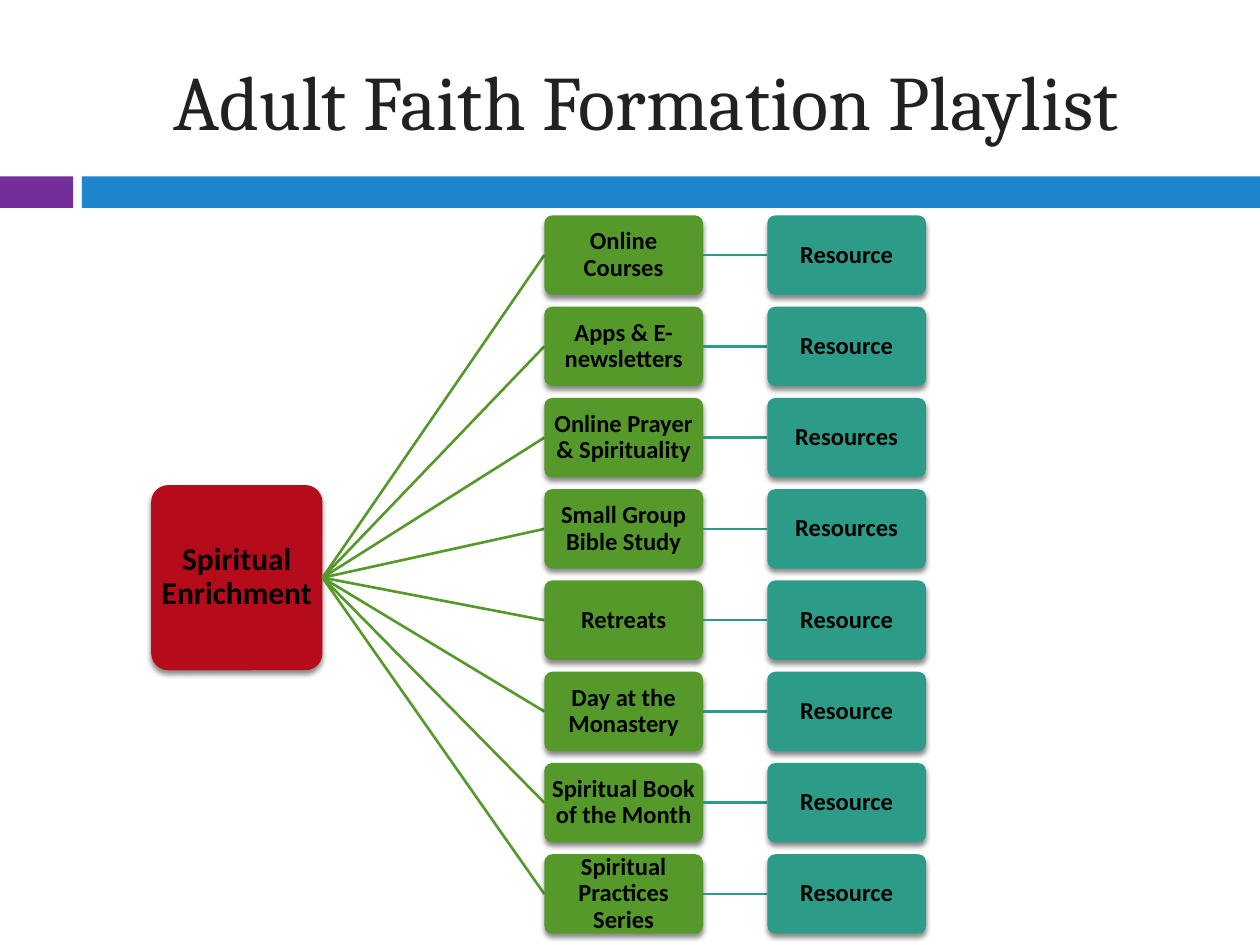
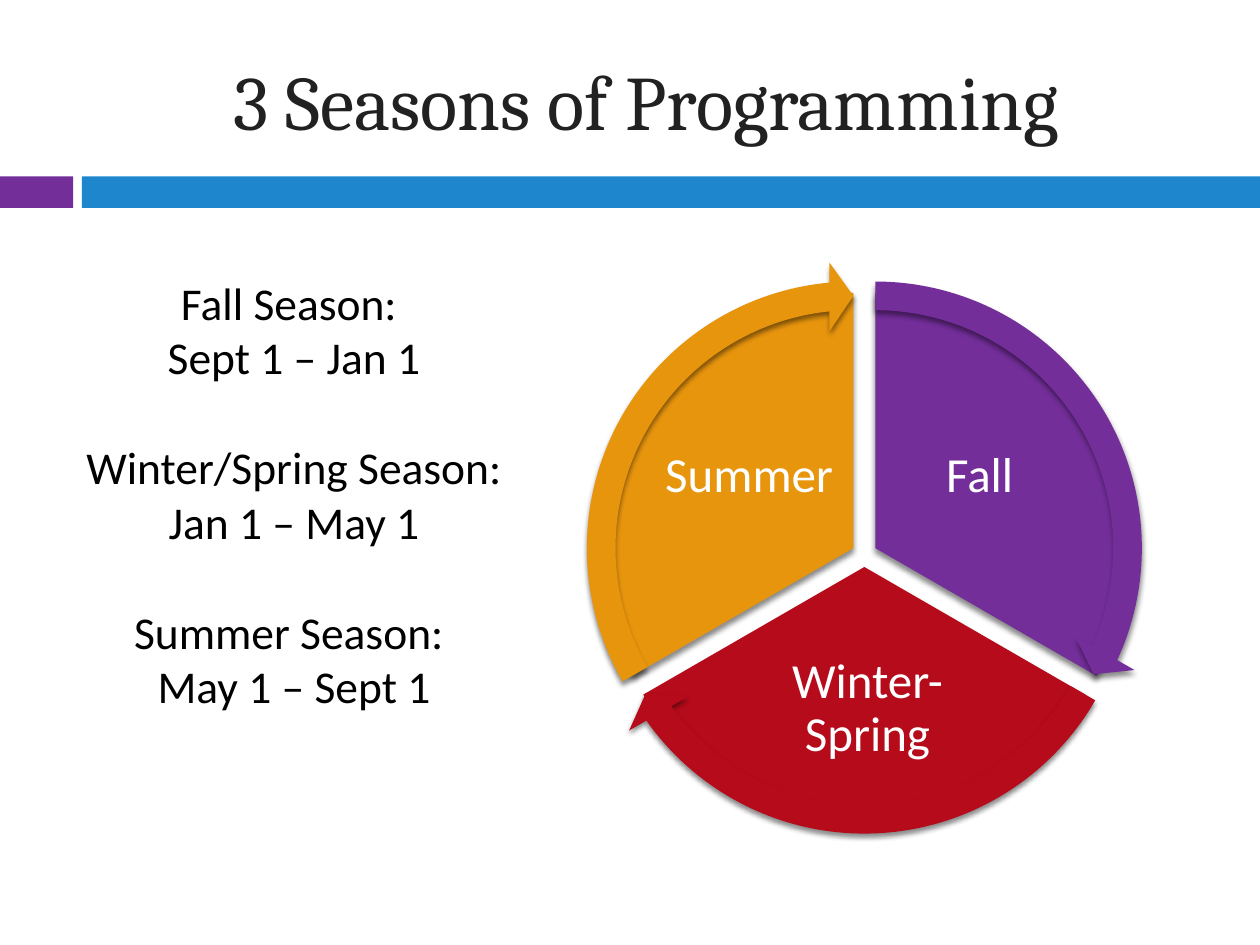
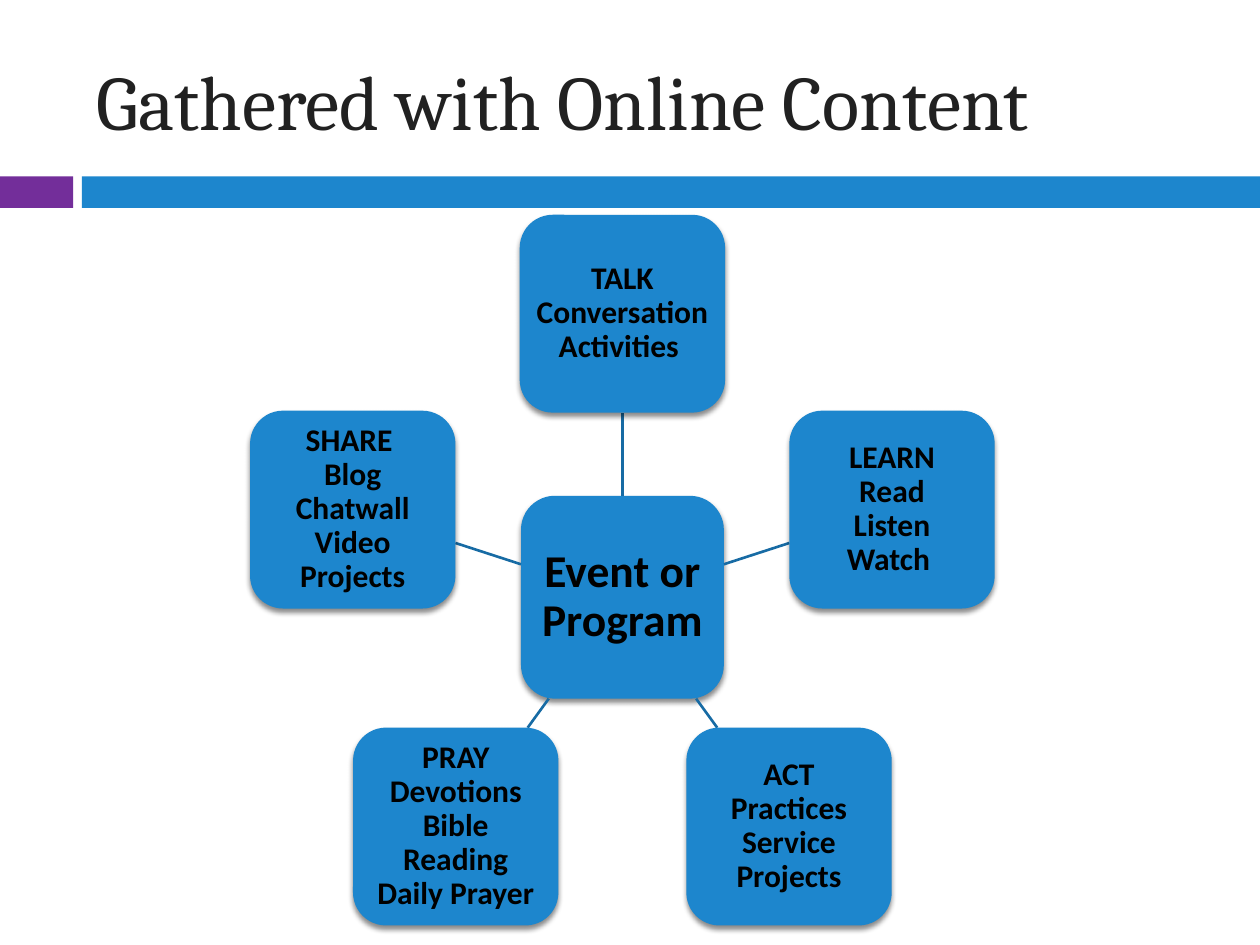
import math

from lxml import etree
from pptx import Presentation
from pptx.dml.color import RGBColor
from pptx.enum import shapes, text
from pptx.oxml import parse_xml
from pptx.oxml.ns import nsdecls, qn
from pptx.util import Inches, Pt

PURPLE = RGBColor(0x73, 0x2E, 0x9A)
BLUE = RGBColor(0x1D, 0x86, 0xCD)
DEEP_BLUE = RGBColor(0x17, 0x6B, 0xA4)
RED = RGBColor(0xB5, 0x0B, 0x1B)
GREEN = RGBColor(0x55, 0x99, 0x2B)
TEAL = RGBColor(0x2C, 0x9C, 0x89)
ORANGE = RGBColor(0xE8, 0x95, 0x0E)
INK = RGBColor(0x21, 0x21, 0x21)
BLACK = RGBColor(0, 0, 0)
WHITE = RGBColor(0xFF, 0xFF, 0xFF)

HEADING_FONT = "Cambria"
BODY_FONT = "Calibri"
CENTER = text.PP_ALIGN.CENTER
LEFT = text.PP_ALIGN.LEFT
MIDDLE = text.MSO_ANCHOR.MIDDLE
TOP = text.MSO_ANCHOR.TOP
PRESET = shapes.MSO_SHAPE

PLAYLIST_TITLE = "Adult Faith Formation Playlist"
PLAYLIST_THEME = "Spiritual Enrichment"
PLAYLIST = [
    ("Online Courses", "Resource"),
    ("Apps & E-newsletters", "Resource"),
    ("Online Prayer & Spirituality", "Resources"),
    ("Small Group Bible Study", "Resources"),
    ("Retreats", "Resource"),
    ("Day at the Monastery", "Resource"),
    ("Spiritual Book of the Month", "Resource"),
    ("Spiritual Practices Series", "Resource"),
]

SEASONS_TITLE = "3 Seasons of Programming"
SEASON_DATES = [
    ["Fall Season: ", "Sept 1 – Jan 1"],
    ["Winter/Spring Season: Jan 1 – May 1"],
    ["Summer Season: ", "May 1 – Sept 1"],
]
SEASONS = [
    ("Fall", PURPLE, 270, (7.05, 3.18, 1.45, 1.21)),
    ("Winter-Spring", RED, 30, (5.8, 5.1, 2.17, 1.06)),
    ("Summer", ORANGE, 150, (5.22, 3.18, 1.45, 1.21)),
]

GATHERED_TITLE = "Gathered with Online Content"
GATHERED_HUB = "Event or Program"
GATHERED_ACTIVITIES = [
    "TALK\nConversation Activities ",
    "LEARN\nRead\nListen\nWatch ",
    "ACT\nPractices\nService\nProjects",
    "PRAY\nDevotions Bible Reading Daily Prayer",
    "SHARE \nBlog Chatwall\nVideo\nProjects",
]


def add_shadow(shape):
    shape._element.spPr.append(parse_xml(
        f'<a:effectLst {nsdecls("a")}>'
        '<a:outerShdw blurRad="38100" dist="30000" dir="5400000" rotWithShape="0">'
        '<a:srgbClr val="000000"><a:alpha val="45000"/></a:srgbClr>'
        '</a:outerShdw></a:effectLst>'))


def add_solid(slide, preset, box, color, adjustments=(), shadow=True):
    solid = slide.shapes.add_shape(preset, *map(Inches, box))
    solid.fill.solid()
    solid.fill.fore_color.rgb = color
    solid.line.fill.background()
    for index, value in enumerate(adjustments):
        solid.adjustments[index] = value
    if shadow:
        add_shadow(solid)
    else:
        solid.shadow.inherit = False
    return solid


def write(shape, lines, size, color, font=BODY_FONT, bold=False, align=CENTER,
          anchor=MIDDLE, inset=None, spacing=None):
    frame = shape.text_frame
    frame.word_wrap = True
    frame.vertical_anchor = anchor
    if inset is not None:
        frame.margin_left = frame.margin_right = Inches(inset)
        frame.margin_top = frame.margin_bottom = Inches(inset)
    for index, line in enumerate(lines):
        paragraph = frame.add_paragraph() if index else frame.paragraphs[0]
        paragraph.text = line
        paragraph.alignment = align
        if spacing:
            paragraph.line_spacing = spacing
        paragraph.font.name = font
        paragraph.font.size = Pt(size)
        paragraph.font.bold = bold
        paragraph.font.color.rgb = color
    return frame


def add_text(slide, box, lines, size, color, **style):
    return write(slide.shapes.add_textbox(*map(Inches, box)), lines, size, color, **style)


def add_card(slide, box, label, size, color, inset, adjustments=()):
    card = add_solid(slide, PRESET.ROUNDED_RECTANGLE, box, color, adjustments)
    write(card, [label], size, BLACK, bold=True, inset=inset, spacing=0.9)


def add_link(slide, start, end, color):
    link = slide.shapes.add_connector(
        shapes.MSO_CONNECTOR.STRAIGHT, *map(Inches, (*start, *end)))
    link.line.color.rgb = color
    link.line.width = Pt(1.5)
    etree.SubElement(link._element.spPr, qn("a:effectLst"))


def add_titled_slide(deck, title, align=CENTER):
    slide = deck.slides.add_slide(deck.slide_layouts[6])
    add_solid(slide, PRESET.RECTANGLE, (0, 1.4, 0.58, 0.25), PURPLE, shadow=False)
    add_solid(slide, PRESET.RECTANGLE, (0.65, 1.4, 9.35, 0.25), BLUE, shadow=False)
    add_text(slide, (0.67, 0.25, 8.92, 1.08), [title], 44, INK,
             font=HEADING_FONT, align=align)
    return slide


def build_playlist(deck):
    slide = add_titled_slide(deck, PLAYLIST_TITLE)
    theme_left, theme_top, theme_width, theme_height = 1.2, 3.85, 1.36, 1.47
    topic_left, resource_left = 4.32, 6.09
    width, height = 1.26, 0.63
    first_top, last_top = 1.71, 6.78
    pitch = (last_top - first_top) / (len(PLAYLIST) - 1)
    fan_start = (theme_left + theme_width, theme_top + theme_height / 2)
    add_card(slide, (theme_left, theme_top, theme_width, theme_height),
             PLAYLIST_THEME, 18, RED, 0.01, [0.1])
    for row, (topic, resource) in enumerate(PLAYLIST):
        top = first_top + row * pitch
        middle = top + height / 2
        add_link(slide, fan_start, (topic_left, middle), GREEN)
        add_card(slide, (topic_left, top, width, height), topic, 14, GREEN, 0.01, [0.1])
        add_link(slide, (topic_left + width, middle), (resource_left, middle), TEAL)
        add_card(slide, (resource_left, top, width, height), resource, 14, TEAL, 0.01, [0.1])


def build_seasons(deck):
    slide = add_titled_slide(deck, SEASONS_TITLE)
    lines = [line for season in SEASON_DATES for line in season]
    dates = add_text(slide, (0.55, 2.13, 3.57, 4.53), lines, 26, BLACK, anchor=TOP)
    openers = [season[0] for season in SEASON_DATES[1:]]
    for paragraph in dates.paragraphs:
        if paragraph.text in openers:
            paragraph.space_before = Pt(31.7)

    center_x, center_y, gap = 6.86, 4.4, 0.1
    pie_size, arrow_size = 4.05, 4.55
    degree = 0.6
    head = 3.28

    def season_box(start, size):
        middle = math.radians(start + 60)
        return (center_x + gap * math.cos(middle) - size / 2,
                center_y + gap * math.sin(middle) - size / 2, size, size)

    for name, color, start, label_box in SEASONS:
        end = (start + 120) % 360
        add_solid(slide, PRESET.PIE, season_box(start, pie_size), color,
                  [start * degree, end * degree])
        add_text(slide, label_box, [name], 28, WHITE, inset=0.04, spacing=0.9)
    for name, color, start, label_box in SEASONS:
        end = (start + 120) % 360
        add_solid(slide, PRESET.CIRCULAR_ARROW, season_box(start, arrow_size), color,
                  [0.05, head, end * degree - head, start * degree, 0.06])


def build_gathered(deck):
    slide = add_titled_slide(deck, GATHERED_TITLE, LEFT)
    center_x, center_y, radius = 4.94, 4.74, 2.25
    hub_size = (1.61, 1.61)
    activity_size = (1.63, 1.57)

    def centered_box(x, y, size):
        return (x - size[0] / 2, y - size[1] / 2, *size)

    def edge_distance(size, cosine, sine):
        return min(half / 2 / max(abs(part), 0.01)
                   for half, part in zip(size, (cosine, sine)))

    add_card(slide, centered_box(center_x, center_y, hub_size), GATHERED_HUB, 26, BLUE, 0.07)
    for index, activity in enumerate(GATHERED_ACTIVITIES):
        angle = math.radians(index * 360 / len(GATHERED_ACTIVITIES) - 90)
        cosine, sine = math.cos(angle), math.sin(angle)
        spoke = [(center_x + reach * cosine, center_y + reach * sine) for reach in (
            edge_distance(hub_size, cosine, sine),
            radius - edge_distance(activity_size, cosine, sine))]
        add_link(slide, *spoke, DEEP_BLUE)
        add_card(slide, centered_box(center_x + radius * cosine, center_y + radius * sine,
                                     activity_size), activity, 18, BLUE, 0.05)


def main():
    deck = Presentation()
    deck.slide_width, deck.slide_height = Inches(10), Inches(7.5)
    build_playlist(deck)
    build_seasons(deck)
    build_gathered(deck)
    deck.save("out.pptx")


if __name__ == "__main__":
    main()
